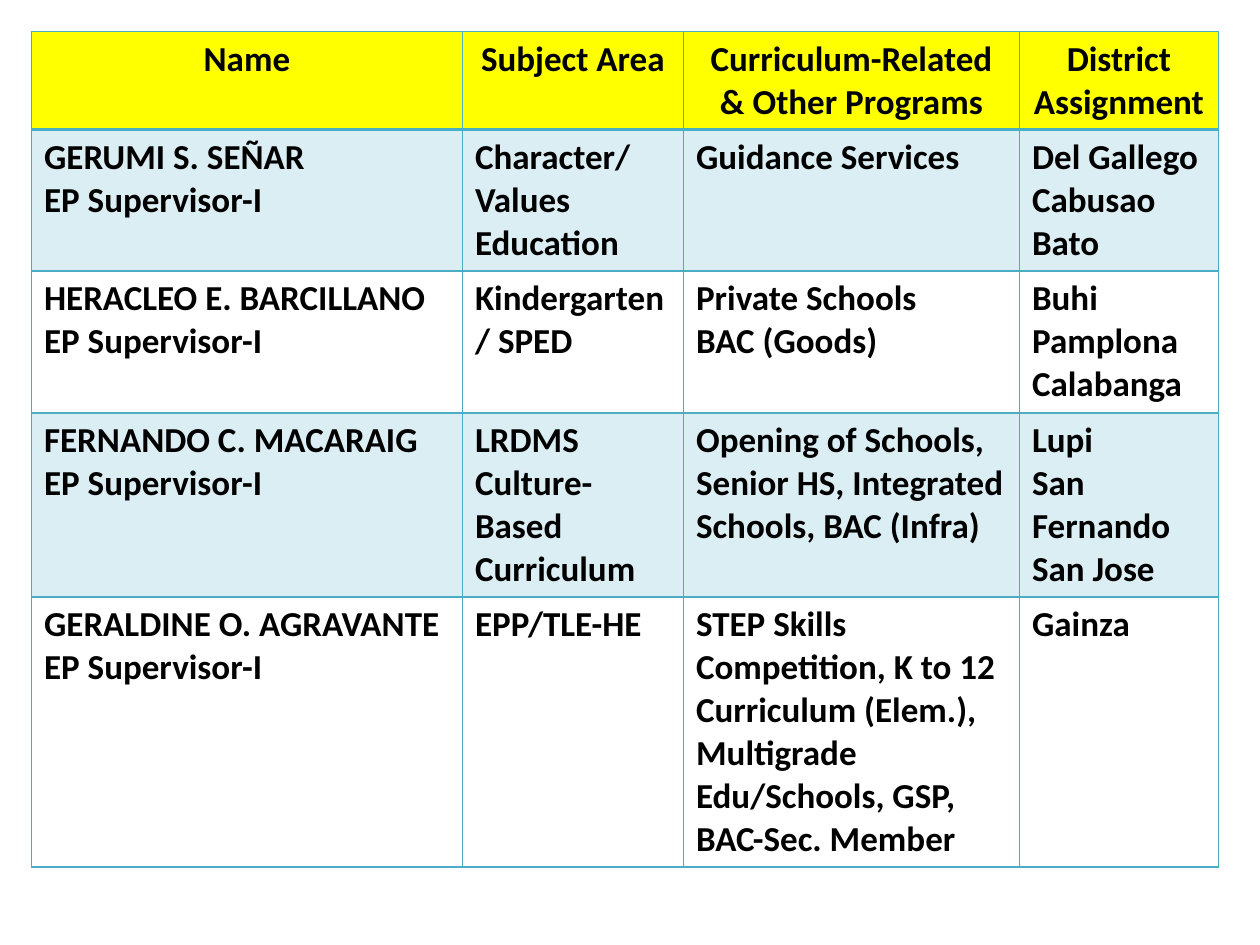
from lxml import etree
from pptx import Presentation
from pptx import util as u
from pptx.dml import color
from pptx.enum import text
from pptx.oxml import ns

PX = 914400 / 126
TEAL = "4BACC6"
YELLOW = "FFFF00"
BLACK = "000000"


def rgb(value):
    return color.RGBColor.from_string(value)


def add_border(properties, position, side, points):
    line = etree.Element(ns.qn(f"a:{side}"), w=str(u.Pt(points)))
    fill = etree.SubElement(line, ns.qn("a:solidFill"))
    etree.SubElement(fill, ns.qn("a:srgbClr"), val=TEAL)
    properties.insert(position, line)


widths = [431, 221, 336, 199]
heights = [98, 141, 142, 184, 269]
rows = [
    ["Name", "Subject Area", "Curriculum-Related & Other Programs", "District Assignment"],
    ["GERUMI S. SEÑAR\nEP Supervisor-I", "Character/ Values Education",
     "Guidance Services", "Del Gallego\nCabusao\nBato"],
    ["HERACLEO E. BARCILLANO\nEP Supervisor-I", "Kindergarten/ SPED",
     "Private Schools\nBAC (Goods)", "Buhi\nPamplona\nCalabanga"],
    ["FERNANDO C. MACARAIG\nEP Supervisor-I", "LRDMS\nCulture-Based\nCurriculum",
     "Opening of Schools, Senior HS, Integrated Schools, BAC (Infra)",
     "Lupi\nSan Fernando\nSan Jose"],
    ["GERALDINE O. AGRAVANTE\nEP Supervisor-I", "EPP/TLE-HE",
     "STEP Skills Competition, K to 12 Curriculum (Elem.), Multigrade Edu/Schools, GSP, BAC-Sec. Member",
     "Gainza"],
]

presentation = Presentation()
presentation.slide_width = u.Inches(10)
presentation.slide_height = u.Inches(7.5)
slide = presentation.slides.add_slide(presentation.slide_layouts[6])

frame = slide.shapes.add_table(
    len(rows), len(widths), u.Inches(0.25), u.Inches(0.25),
    round(sum(widths) * PX), round(sum(heights) * PX))
table = frame.table
table.first_row = False
table.horz_banding = False
for column, width in zip(table.columns, widths):
    column.width = round(width * PX)
for row, height in zip(table.rows, heights):
    row.height = round(height * PX)

for row_index, values in enumerate(rows):
    for column_index, value in enumerate(values):
        cell = table.cell(row_index, column_index)
        cell.text = value
        for paragraph in cell.text_frame.paragraphs:
            paragraph.alignment = text.PP_ALIGN.LEFT if row_index else text.PP_ALIGN.CENTER
            paragraph.font.name = "Calibri"
            paragraph.font.size = u.Pt(20)
            paragraph.font.bold = True
            paragraph.font.color.rgb = rgb(BLACK)

        properties = cell._tc.get_or_add_tcPr()
        if row_index == 0:
            cell.fill.solid()
            cell.fill.fore_color.rgb = rgb(YELLOW)
        elif row_index % 2:
            cell.fill.solid()
            cell.fill.fore_color.rgb = rgb(TEAL)
            tint = properties.find(".//" + ns.qn("a:srgbClr"))
            etree.SubElement(tint, ns.qn("a:alpha"), val="20000")
        else:
            cell.fill.background()

        top = 2 if row_index == 1 else 1
        bottom = 2 if row_index == 0 else 1
        borders = [("lnL", 1), ("lnR", 1), ("lnT", top), ("lnB", bottom)]
        for position, (side, points) in enumerate(borders):
            add_border(properties, position, side, points)

presentation.save("out.pptx")
